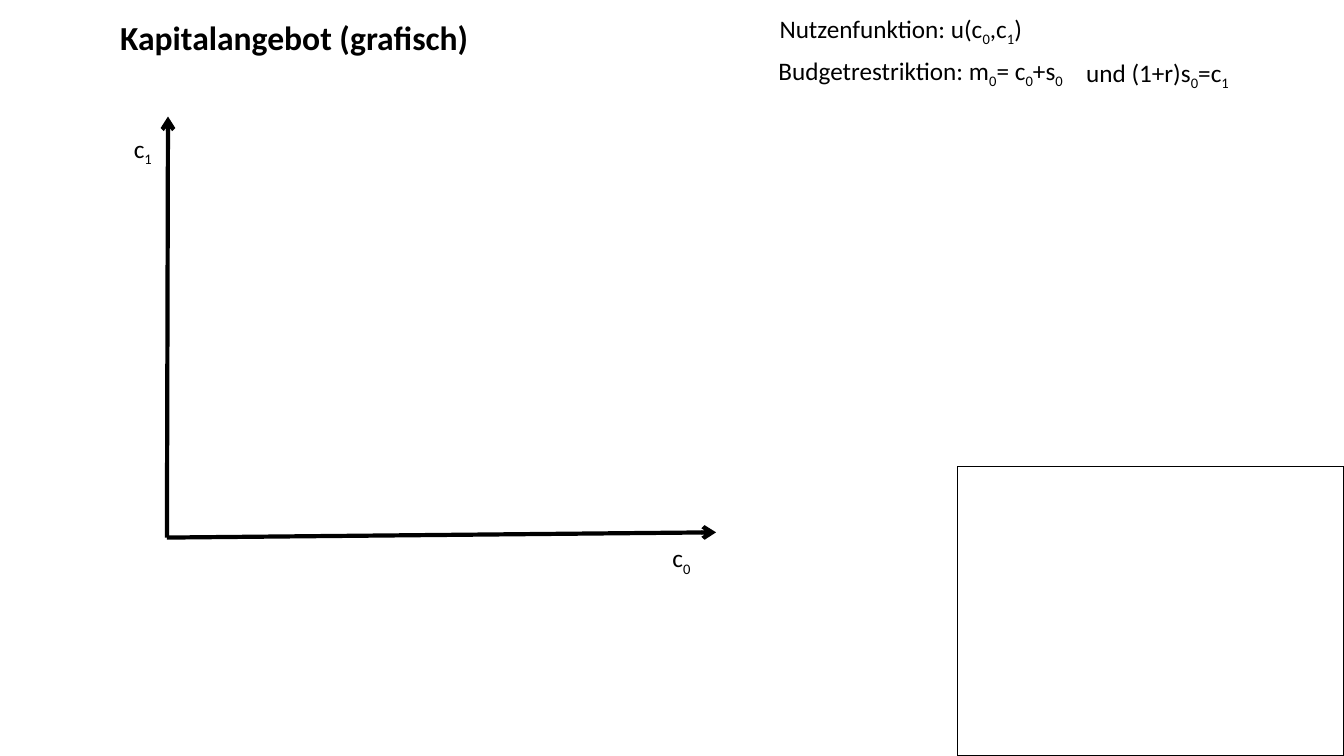
from dataclasses import dataclass

from lxml.etree import SubElement
from pptx import Presentation
from pptx.dml.color import RGBColor
from pptx.enum.shapes import MSO_CONNECTOR, MSO_SHAPE
from pptx.enum.text import MSO_AUTO_SIZE
from pptx.oxml.ns import qn
from pptx.slide import Slide
from pptx.util import Emu, Pt

EMU_PER_PX = 9525
SLIDE_WIDTH, SLIDE_HEIGHT = 1280, 720
COLORS = {"ink": "000000", "background": "FFFFFF"}
FONT = "Calibri"
SUBSCRIPT_BASELINE = "-25000"


@dataclass(frozen=True)
class Label:
    left: int
    top: int
    width: int
    height: int
    runs: tuple[str, ...]
    size: int = 18
    bold: bool = False
    wrap: bool = False


@dataclass(frozen=True)
class Axis:
    end_x: int
    end_y: int


ORIGIN_X, ORIGIN_Y = 159, 512
AXES = (Axis(682, 507), Axis(160, 111))

# Runs alternate between normal text and subscript.
LABELS = (
    Label(105, 11, 352, 48, ("Kapitalangebot (grafisch)",), size=24, bold=True),
    Label(118, 122, 84, 38, ("c", "1"), wrap=True),
    Label(631, 512, 37, 38, ("c", "0")),
    Label(732, 48, 306, 38, ("Budgetrestriktion: m", "0", "= c", "0", "+s", "0")),
    Label(1025, 50, 159, 38, ("und (1+r)s", "0", "=c", "1")),
    Label(733, 8, 261, 38, ("Nutzenfunktion: u(c", "0", ",c", "1", ")")),
)


def px(length: int) -> Emu:
    return Emu(length * EMU_PER_PX)


def color(name: str) -> RGBColor:
    return RGBColor.from_string(COLORS[name])


def add_frame(slide: Slide, left: int, top: int) -> None:
    shape = slide.shapes.add_shape(
        MSO_SHAPE.RECTANGLE,
        px(left), px(top), px(SLIDE_WIDTH - left), px(SLIDE_HEIGHT - top),
    )
    shape.shadow.inherit = False
    shape.fill.background()
    shape.line.color.rgb = color("ink")
    shape.line.width = Pt(1)


def add_axis(slide: Slide, axis: Axis) -> None:
    connector = slide.shapes.add_connector(
        MSO_CONNECTOR.STRAIGHT,
        px(ORIGIN_X), px(ORIGIN_Y), px(axis.end_x), px(axis.end_y),
    )
    connector.line.color.rgb = color("ink")
    connector.line.width = Pt(3)
    properties = connector._element.spPr
    SubElement(properties.find(qn("a:ln")), qn("a:tailEnd"), type="arrow")
    SubElement(properties, qn("a:effectLst"))


def add_label(slide: Slide, label: Label) -> None:
    shape = slide.shapes.add_textbox(
        px(label.left), px(label.top), px(label.width), px(label.height)
    )
    frame = shape.text_frame
    frame.word_wrap = label.wrap
    frame.auto_size = MSO_AUTO_SIZE.SHAPE_TO_FIT_TEXT
    paragraph = frame.paragraphs[0]
    for index, text in enumerate(label.runs):
        run = paragraph.add_run()
        run.text = text
        run.font.name = FONT
        run.font.size = Pt(label.size)
        run.font.bold = label.bold
        run.font.color.rgb = color("ink")
        if index % 2:
            run._r.get_or_add_rPr().set("baseline", SUBSCRIPT_BASELINE)


def main() -> None:
    presentation = Presentation()
    presentation.slide_width = px(SLIDE_WIDTH)
    presentation.slide_height = px(SLIDE_HEIGHT)
    slide = presentation.slides.add_slide(presentation.slide_layouts[6])
    slide.background.fill.solid()
    slide.background.fill.fore_color.rgb = color("background")

    add_frame(slide, 912, 444)
    for axis in AXES:
        add_axis(slide, axis)
    for label in LABELS:
        add_label(slide, label)

    presentation.save("out.pptx")


if __name__ == "__main__":
    main()
